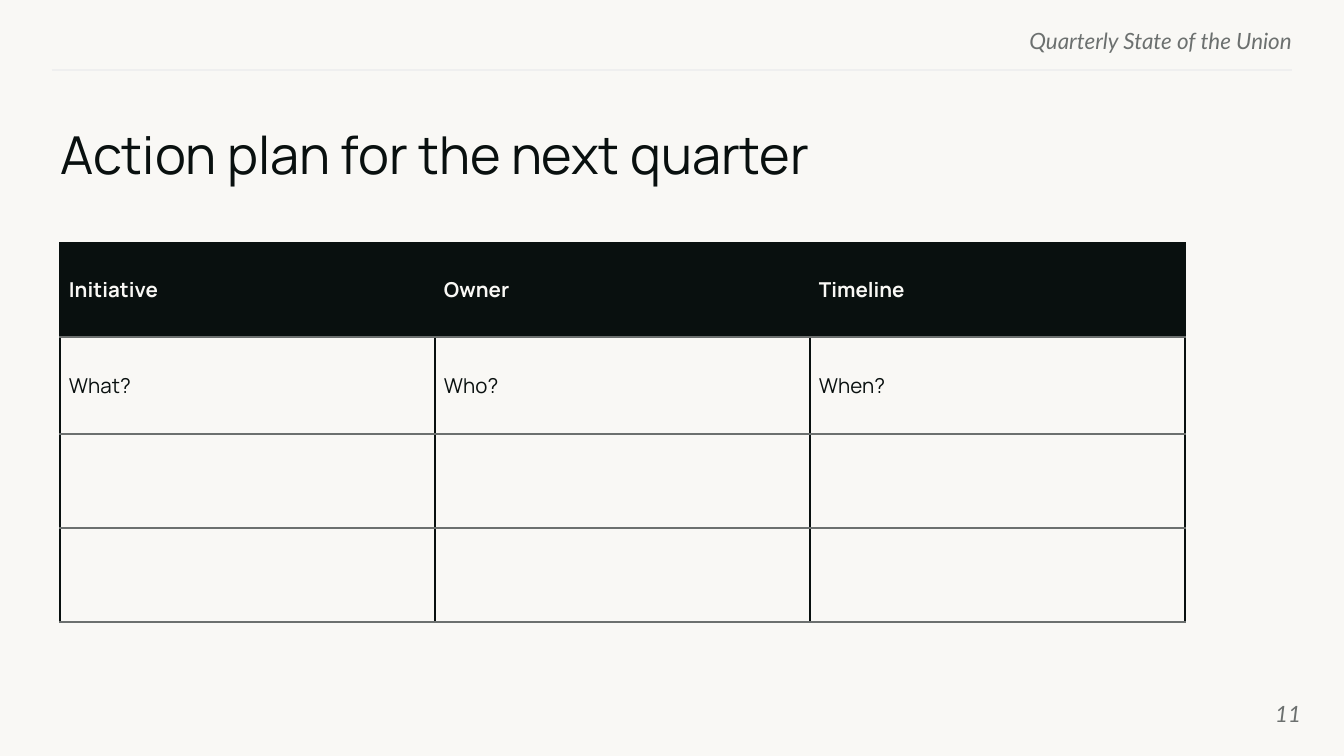
import pptx
import pptx.dml.color
import pptx.enum.shapes
import pptx.enum.text
import pptx.oxml.ns
import pptx.util
import lxml.etree

INK, GREY, PAPER, RULE = "09100F", "6C706F", "F9F8F5", "EFEFEF"
ALIGN = pptx.enum.text.PP_ALIGN
ANCHOR = pptx.enum.text.MSO_ANCHOR

LABEL = {"font": "Lato", "size": 12, "color": GREY, "italic": True}
HEAD = {"font": "Manrope", "size": 11, "color": PAPER, "bold": True}
BODY = {"font": "Manrope", "size": 11, "color": INK, "bold": False}
TITLE = {"font": "Manrope", "size": 28, "color": INK}

# text, box in px, style, alignment, anchor
TEXTS = [
    ("Quarterly State of the Union", (774, 27, 518, 24), LABEL, ALIGN.RIGHT, ANCHOR.TOP),
    ("Action plan for the next quarter", (60, 122, 1241, 69), TITLE, ALIGN.LEFT, ANCHOR.TOP),
    ("11", (1220, 685, 81, 58), LABEL, ALIGN.RIGHT, ANCHOR.MIDDLE),
]
PLAN = [
    ("Initiative", "Owner", "Timeline"),
    ("What?", "Who?", "When?"),
    ("", "", ""),
    ("", "", ""),
]
LEFT, TOP, COL = 60, 243, 375
ROWS = [94, 97, 94, 94]
PAD = 9


def px(n):
    return round(n * 914400 / 134.4)


def rgb(color):
    return pptx.dml.color.RGBColor.from_string(color)


def add_run(para, text, style):
    run = para.add_run()
    run.text = text
    font = run.font
    font.name, font.size = style["font"], pptx.util.Pt(style["size"])
    font.color.rgb = rgb(style["color"])
    font.bold, font.italic = style.get("bold"), style.get("italic")


def add_text(slide, text, box, style, align, anchor):
    frame = slide.shapes.add_textbox(*map(px, box)).text_frame
    frame.margin_left = frame.margin_top = frame.margin_right = frame.margin_bottom = 0
    frame.word_wrap = True
    frame.vertical_anchor = anchor
    para = frame.paragraphs[0]
    para.alignment = align
    add_run(para, text, style)


def add_rule(slide, start, end, y):
    line = slide.shapes.add_connector(
        pptx.enum.shapes.MSO_CONNECTOR.STRAIGHT, px(start), px(y), px(end), px(y))
    line.line.color.rgb = rgb(RULE)
    line.line.width = pptx.util.Pt(0.75)
    lxml.etree.SubElement(
        line._element.spPr, pptx.oxml.ns.qn("a:effectLst"))


def set_edge(cell, side, color, width):
    qn = pptx.oxml.ns.qn
    edge = lxml.etree.SubElement(
        cell._tc.get_or_add_tcPr(), qn("a:ln" + side), w=str(pptx.util.Pt(width)))
    fill = lxml.etree.SubElement(edge, qn("a:solidFill"))
    lxml.etree.SubElement(fill, qn("a:srgbClr"), val=color)


def fill_cell(cell, text, head):
    cell.margin_left = cell.margin_right = px(PAD)
    cell.margin_top = cell.margin_bottom = px(PAD)
    cell.vertical_anchor = ANCHOR.MIDDLE
    for side in "LR":
        set_edge(cell, side, INK, 0.75)
    set_edge(cell, "T", *((INK, 0.75) if head else (GREY, 1)))
    set_edge(cell, "B", GREY, 1)
    if head:
        cell.fill.solid()
        cell.fill.fore_color.rgb = rgb(INK)
    else:
        cell.fill.background()
    if text:
        add_run(cell.text_frame.paragraphs[0], text, HEAD if head else BODY)


def add_plan(slide):
    count = len(PLAN[0])
    table = slide.shapes.add_table(
        len(PLAN), count, px(LEFT), px(TOP), px(COL * count), px(sum(ROWS))).table
    table.first_row = table.horz_banding = False
    for col in table.columns:
        col.width = px(COL)
    for r, (height, texts) in enumerate(zip(ROWS, PLAN)):
        table.rows[r].height = px(height)
        for c, text in enumerate(texts):
            fill_cell(table.cell(r, c), text, r == 0)


def main():
    deck = pptx.Presentation()
    deck.slide_width, deck.slide_height = px(1344), px(756)
    slide = deck.slides.add_slide(deck.slide_layouts[6])
    slide.background.fill.solid()
    slide.background.fill.fore_color.rgb = rgb(PAPER)
    add_rule(slide, 52, 1292, 70)
    for item in TEXTS:
        add_text(slide, *item)
    add_plan(slide)
    deck.save("out.pptx")


if __name__ == "__main__":
    main()
